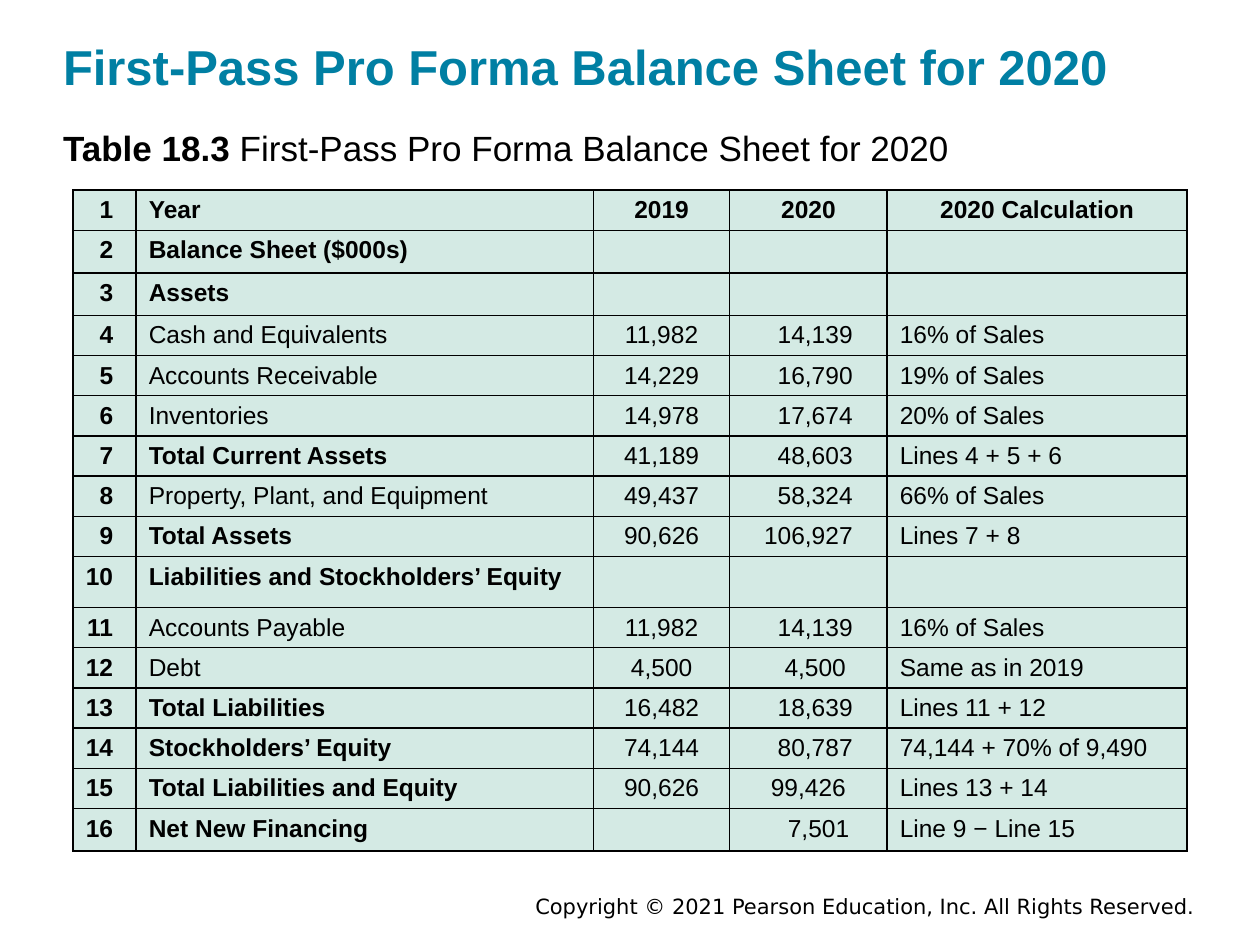
from lxml.etree import SubElement
from pptx import Presentation
from pptx.dml.color import RGBColor
from pptx.enum.text import MSO_ANCHOR, MSO_AUTO_SIZE, PP_ALIGN as Align
from pptx.oxml.ns import qn
from pptx.util import Pt

TITLE = "First-Pass Pro Forma Balance Sheet for 2020"
CAPTION = [("Table 18.3 ", True), (TITLE, False)]
COPYRIGHT = "Copyright © 2021 Pearson Education, Inc. All Rights Reserved."

HEADER = ("Year", "2019", "2020", "2020 Calculation")
# label, 2019, 2020, calculation
LINES = [
    ("Balance Sheet ($000s)", "", "", ""),
    ("Assets", "", "", ""),
    ("Cash and Equivalents", "11,982", "14,139", "16% of Sales"),
    ("Accounts Receivable", "14,229", "16,790", "19% of Sales"),
    ("Inventories", "14,978", "17,674", "20% of Sales"),
    ("Total Current Assets", "41,189", "48,603", "Lines 4 + 5 + 6"),
    ("Property, Plant, and Equipment", "49,437", "58,324", "66% of Sales"),
    ("Total Assets", "90,626", "106,927", "Lines 7 + 8"),
    ("Liabilities and Stockholders’ Equity", "", "", ""),
    ("Accounts Payable", "11,982", "14,139", "16% of Sales"),
    ("Debt", "4,500", "4,500", "Same as in 2019"),
    ("Total Liabilities", "16,482", "18,639", "Lines 11 + 12"),
    ("Stockholders’ Equity", "74,144", "80,787", "74,144 + 70% of 9,490"),
    ("Total Liabilities and Equity", "90,626", "99,426", "Lines 13 + 14"),
    ("Net New Financing", "", "7,501", "Line 9 − Line 15"),
]
PLAIN_LABELS = {"Cash and Equivalents", "Accounts Receivable", "Inventories",
                "Property, Plant, and Equipment", "Accounts Payable", "Debt"}

THEME = {
    "font": "Arial", "footer_font": "DejaVu Sans",
    "title": "007FA3", "text": "000000", "cell": "D4EAE4", "border": "000000",
    "title_size": 28, "caption_size": 20, "table_size": 14, "footer_size": 12,
}
COLUMNS = (36, 261.4, 77.8, 90, 171.4)
ROW, TALL_ROW, TALL_LINE = 20.2, 29.2, 10
NUMBER_INSET, AMOUNT_INSET = 13.2, 19.7
SHIFTED_AMOUNTS = {12: 23.6, 15: 23.6, 16: 21.7}  # right inset by line number


def write(para, text, size, bold=False, color=THEME["text"],
          font=THEME["font"], align=Align.LEFT):
    para.alignment = align
    para.space_before = Pt(0)
    span = para.add_run()
    span.text = text
    span.font.name, span.font.size, span.font.bold = font, Pt(size), bold
    span.font.color.rgb = RGBColor.from_string(color)


def place(box, left, top, width, height):
    box.left, box.top, box.width, box.height = map(Pt, (left, top, width, height))


def reset_frame(box, anchor):
    """Strip the insets and automatic sizing and return the first paragraph."""
    frame = box.text_frame
    frame.margin_left = frame.margin_right = frame.margin_top = frame.margin_bottom = 0
    frame.auto_size, frame.vertical_anchor = MSO_AUTO_SIZE.NONE, anchor
    frame.word_wrap = True
    return frame.paragraphs[0]


def style_cell(cell):
    props = cell._tc.get_or_add_tcPr()
    for side in ("a:lnL", "a:lnR", "a:lnT", "a:lnB"):
        line = SubElement(props, qn(side), w=str(Pt(1)))
        fill = SubElement(line, qn("a:solidFill"))
        SubElement(fill, qn("a:srgbClr"), val=THEME["border"])
    cell.fill.solid()
    cell.fill.fore_color.rgb = RGBColor.from_string(THEME["cell"])


def cell_format(number, column, label):
    """Return bold, alignment and right inset for one cell."""
    if column == 0:
        return True, Align.RIGHT, NUMBER_INSET
    if column == 1:
        return label not in PLAIN_LABELS, Align.LEFT, 7.2
    if number == 1:
        return True, Align.CENTER, 7.2
    if column == 2:
        return False, Align.CENTER, 7.2
    if column == 3:
        return False, Align.RIGHT, SHIFTED_AMOUNTS.get(number, AMOUNT_INSET)
    return False, Align.LEFT, 7.2


def add_balance_sheet(page):
    rows = [HEADER, *LINES]
    height = ROW * (len(rows) - 1) + TALL_ROW
    table = page.shapes.add_table(len(rows), len(COLUMNS), Pt(41.8), Pt(108.7),
                                  Pt(sum(COLUMNS)), Pt(height)).table
    table.first_row = table.horz_banding = False
    for column, width in zip(table.columns, COLUMNS):
        column.width = Pt(width)
    for number, row in enumerate(rows, 1):
        table.rows[number - 1].height = Pt(TALL_ROW if number == TALL_LINE else ROW)
        for column, text in enumerate((str(number), *row)):
            cell = table.cell(number - 1, column)
            style_cell(cell)
            para = cell.text_frame.paragraphs[0]
            if not text:
                SubElement(para._p, qn("a:endParaRPr"), sz=str(THEME["table_size"] * 100))
                continue
            bold, align, inset = cell_format(number, column, row[0])
            cell.margin_right = Pt(inset)
            write(para, text, THEME["table_size"], bold=bold, align=align)


def main():
    deck = Presentation()
    deck.slide_width, deck.slide_height = Pt(720), Pt(540)
    page = deck.slides.add_slide(deck.slide_layouts[1])

    title, caption = page.shapes.title, page.placeholders[1]
    place(title, 36, 19.4, 648, 36.7)
    write(reset_frame(title, MSO_ANCHOR.MIDDLE), TITLE, THEME["title_size"],
          bold=True, color=THEME["title"])

    place(caption, 36, 72, 648, 30.2)
    para = reset_frame(caption, MSO_ANCHOR.TOP)
    props = para._p.get_or_add_pPr()
    props.set("marL", "0")
    props.set("indent", "0")
    SubElement(props, qn("a:buNone"))
    for text, bold in CAPTION:
        write(para, text, THEME["caption_size"], bold=bold)

    add_balance_sheet(page)

    footer = page.shapes.add_textbox(Pt(288), Pt(506.9), Pt(401.8), Pt(21.6))
    footer.text_frame.word_wrap = True
    write(footer.text_frame.paragraphs[0], COPYRIGHT, THEME["footer_size"],
          font=THEME["footer_font"], align=Align.RIGHT)

    deck.save("out.pptx")


if __name__ == "__main__":
    main()
